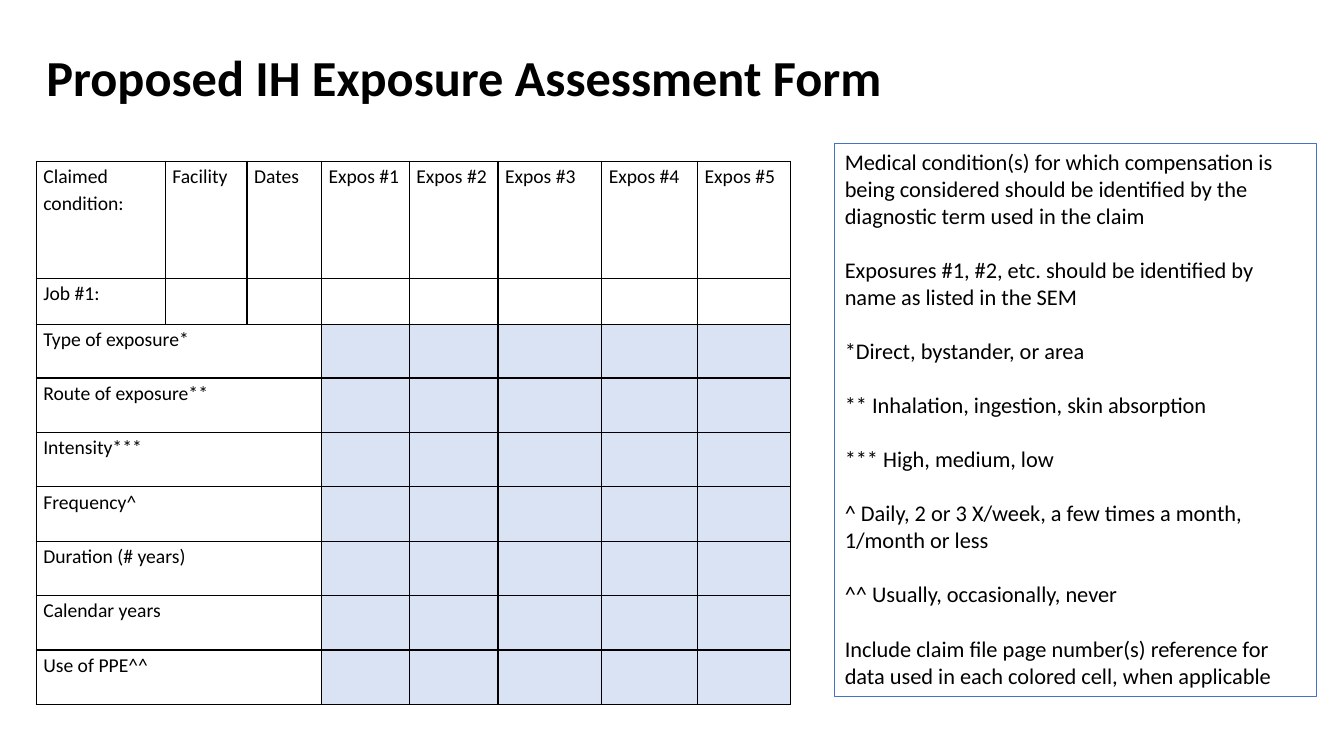
from lxml import etree
from pptx import Presentation
from pptx.dml.color import RGBColor
from pptx.enum.shapes import MSO_SHAPE
from pptx.enum.text import MSO_ANCHOR, PP_ALIGN
from pptx.oxml.ns import qn
from pptx.util import Inches, Pt

TITLE = "Proposed IH Exposure Assessment Form"
HEADINGS = ["Claimed condition:", "Facility", "Dates",
            "Expos #1", "Expos #2", "Expos #3", "Expos #4", "Expos #5"]
JOB = "Job #1:"
FACTORS = ["Type of exposure*", "Route of exposure**", "Intensity***", "Frequency^",
           "Duration (# years)", "Calendar years", "Use of PPE^^"]
NOTES = [
    "Medical condition(s) for which compensation is being considered should be "
    "identified by the diagnostic term used in the claim",
    "Exposures #1, #2, etc. should be identified by name as listed in the SEM",
    "*Direct, bystander, or area",
    "** Inhalation, ingestion, skin absorption",
    "*** High, medium, low",
    "^ Daily, 2 or 3 X/week, a few times a month, 1/month or less",
    "^^ Usually, occasionally, never",
    "Include claim file page number(s) reference for data used in each colored cell, "
    "when applicable",
]
COL_WIDTHS = [1.28, 0.81, 0.74, 0.87, 0.88, 1.03, 0.95, 0.92]
ROW_HEIGHTS = [1.16, 0.46, 0.53] + [0.54] * (len(FACTORS) - 1)
LABEL_COLS = 3

FONT = "Calibri"
BLACK = RGBColor(0x00, 0x00, 0x00)
BLUE = RGBColor(0x44, 0x72, 0xC4)
PALE_BLUE = RGBColor(0xDA, 0xE3, 0xF3)


def style(p, size, bold=False):
    p.alignment = PP_ALIGN.LEFT
    p.font.name = FONT
    p.font.size = Pt(size)
    p.font.bold = bold
    p.font.color.rgb = BLACK


def add_borders(cell):
    """Draw a 1 pt black line on all four sides, ahead of the cell's fill."""
    tc_pr = cell._tc.get_or_add_tcPr()
    for i, side in enumerate(("a:lnL", "a:lnR", "a:lnT", "a:lnB")):
        ln = etree.Element(qn(side), w=str(Pt(1)))
        fill = etree.SubElement(ln, qn("a:solidFill"))
        etree.SubElement(fill, qn("a:srgbClr"), val=str(BLACK))
        tc_pr.insert(i, ln)


def add_title(s):
    title = s.shapes.title
    title.left, title.top = Inches(0.36), Inches(0.15)
    title.width, title.height = Inches(11.5), Inches(1.3)
    tf = title.text_frame
    tf.text = TITLE
    tf.vertical_anchor = MSO_ANCHOR.MIDDLE
    tf.paragraphs[0].line_spacing = 0.9
    style(tf.paragraphs[0], 36, bold=True)


def add_form(s):
    blanks = [""] * (len(HEADINGS) - 1)
    rows = [HEADINGS] + [[label] + blanks for label in [JOB] + FACTORS]
    frame = s.shapes.add_table(len(rows), len(HEADINGS), Inches(0.36), Inches(1.6),
                               Inches(sum(COL_WIDTHS)), Inches(sum(ROW_HEIGHTS)))
    table = frame.table
    table.first_row = table.horz_banding = False
    for col, width in zip(table.columns, COL_WIDTHS):
        col.width = Inches(width)
    for row, height in zip(table.rows, ROW_HEIGHTS):
        row.height = Inches(height)

    for r, row in enumerate(rows):
        is_factor = r >= 2
        for c, text in enumerate(row):
            cell = table.cell(r, c)
            cell.text = text
            cell.margin_left = cell.margin_right = Inches(0.07)
            cell.margin_top = cell.margin_bottom = 0
            p = cell.text_frame.paragraphs[0]
            p.line_spacing = 1.15
            style(p, 14)
            if is_factor and c >= LABEL_COLS:
                cell.fill.solid()
                cell.fill.fore_color.rgb = PALE_BLUE
            else:
                cell.fill.background()
            add_borders(cell)
        if is_factor:
            table.cell(r, 0).merge(table.cell(r, LABEL_COLS - 1))


def add_notes_box(s):
    box = s.shapes.add_shape(MSO_SHAPE.RECTANGLE, Inches(8.28), Inches(1.42),
                             Inches(4.78), Inches(5.49))
    box.shadow.inherit = False
    box.fill.background()
    box.line.color.rgb = BLUE
    box.line.width = Pt(0.75)
    tf = box.text_frame
    tf.word_wrap = True
    tf.vertical_anchor = MSO_ANCHOR.TOP
    tf.text = "\n".join(NOTES)
    for p in tf.paragraphs:
        style(p, 16)
    for p in tf.paragraphs[:-1]:
        p.space_after = Pt(19.5)


def main():
    prs = Presentation()
    prs.slide_width, prs.slide_height = Inches(13.33), Inches(7.5)
    s = prs.slides.add_slide(prs.slide_layouts[5])
    add_title(s)
    add_form(s)
    add_notes_box(s)
    prs.save("out.pptx")


if __name__ == "__main__":
    main()
